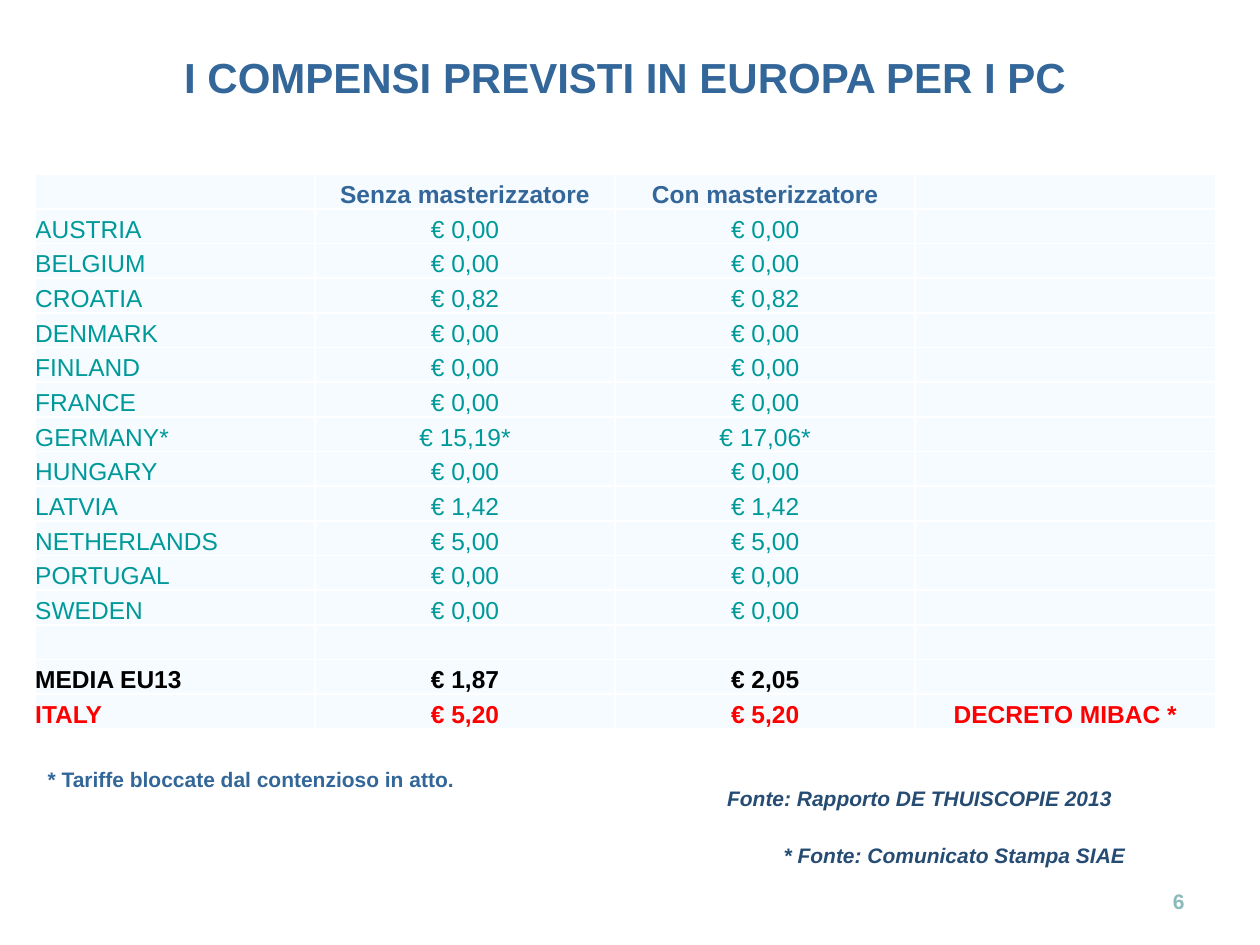
from dataclasses import dataclass, field
from typing import NamedTuple

from pptx import Presentation
from pptx import util as u
from pptx.dml import color
from pptx.enum import text
from pptx.oxml import xmlchemy


@dataclass(frozen=True)
class Theme:
    family: str = "Arial"
    blue: str = "336699"
    navy: str = "264C73"
    teal: str = "009999"
    black: str = "010000"
    red: str = "FF0000"
    sage: str = "8CBABA"
    cell: str = "F6FBFF"
    border: str = "FFFFFF"
    title_size: int = 24
    table_size: int = 14
    note_size: int = 12
    border_width: int = 1


THEME = Theme()
LEFT, CENTER, RIGHT = (text.PP_ALIGN.LEFT, text.PP_ALIGN.CENTER, text.PP_ALIGN.RIGHT)


class Style(NamedTuple):
    color: str
    size: int
    bold: bool = True
    italic: bool = False


@dataclass(frozen=True)
class Label:
    words: str
    box: tuple[float, float, float, float]
    style: Style
    align: text.PP_ALIGN
    frame: dict = field(default_factory=dict)


class Row(NamedTuple):
    values: tuple[str, ...]
    style: Style


HEADING = Style(THEME.blue, THEME.table_size)
COUNTRY = Style(THEME.teal, THEME.table_size, bold=False)
AVERAGE = Style(THEME.black, THEME.table_size)
ITALY = Style(THEME.red, THEME.table_size)
SOURCE = Style(THEME.navy, THEME.note_size, italic=True)

TARIFFS = (
    ("AUSTRIA", "€ 0,00", "€ 0,00"),
    ("BELGIUM", "€ 0,00", "€ 0,00"),
    ("CROATIA", "€ 0,82", "€ 0,82"),
    ("DENMARK", "€ 0,00", "€ 0,00"),
    ("FINLAND", "€ 0,00", "€ 0,00"),
    ("FRANCE", "€ 0,00", "€ 0,00"),
    ("GERMANY*", "€ 15,19*", "€ 17,06*"),
    ("HUNGARY", "€ 0,00", "€ 0,00"),
    ("LATVIA", "€ 1,42", "€ 1,42"),
    ("NETHERLANDS", "€ 5,00", "€ 5,00"),
    ("PORTUGAL", "€ 0,00", "€ 0,00"),
    ("SWEDEN", "€ 0,00", "€ 0,00"),
)
ROWS = (
    Row(("", "Senza masterizzatore", "Con masterizzatore", ""), HEADING),
    *(Row((*tariff, ""), COUNTRY) for tariff in TARIFFS),
    Row(("",) * 4, COUNTRY),
    Row(("MEDIA EU13", "€ 1,87", "€ 2,05", ""), AVERAGE),
    Row(("ITALY", "€ 5,20", "€ 5,20", "DECRETO MIBAC *"), ITALY),
)
COLUMN_WIDTHS = (5.64, 6.05, 6.05, 6.05)
ROW_HEIGHT = 0.7

WRAPPED = {"word_wrap": True}
UNWRAPPED = {"word_wrap": False}
LABELS = (
    Label("I COMPENSI PREVISTI IN EUROPA PER I PC", (0.3, 0.91, 24.61, 1.28),
          Style(THEME.blue, THEME.title_size), CENTER, WRAPPED),
    Label("* Tariffe bloccate dal contenzioso in atto.", (0.71, 15.32, 12, 0.77),
          Style(THEME.blue, THEME.note_size), LEFT, WRAPPED),
    Label("Fonte: Rapporto DE THUISCOPIE 2013", (14.3, 15.72, 8.48, 0.77),
          SOURCE, CENTER, UNWRAPPED),
    Label("* Fonte: Comunicato Stampa SIAE", (15.47, 16.87, 7.47, 0.77),
          SOURCE, RIGHT, UNWRAPPED),
    Label("6", (18.21, 17.65, 5.92, 1.02), Style(THEME.sage, THEME.note_size), RIGHT,
          {**WRAPPED, "vertical_anchor": text.MSO_ANCHOR.MIDDLE}),
)


def apply(target: object, formats: dict) -> None:
    for name, value in formats.items():
        setattr(target, name, value)


def write(paragraph, words: str, style: Style, align: text.PP_ALIGN) -> None:
    paragraph.alignment = align
    if not words:
        ending = xmlchemy.OxmlElement("a:endParaRPr")
        ending.set("sz", str(style.size * 100))
        paragraph._p.append(ending)
        return
    run = paragraph.add_run()
    run.text = words
    apply(run.font, {"name": THEME.family, "size": u.Pt(style.size),
                     "bold": style.bold, "italic": style.italic})
    run.font.color.rgb = color.RGBColor.from_string(style.color)


def draw_label(slide, label: Label) -> None:
    frame = slide.shapes.add_textbox(*map(u.Cm, label.box)).text_frame
    apply(frame, label.frame)
    write(frame.paragraphs[0], label.words, label.style, label.align)


def add_borders(cell) -> None:
    properties = cell._tc.get_or_add_tcPr()
    for position, side in enumerate(("lnL", "lnR", "lnT", "lnB")):
        line = xmlchemy.OxmlElement(f"a:{side}")
        line.set("w", str(u.Pt(THEME.border_width)))
        fill = xmlchemy.OxmlElement("a:solidFill")
        shade = xmlchemy.OxmlElement("a:srgbClr")
        shade.set("val", THEME.border)
        fill.append(shade)
        line.append(fill)
        properties.insert(position, line)


def fill_cell(cell, words: str, style: Style, align: text.PP_ALIGN) -> None:
    margins = ("margin_left", "margin_right", "margin_top", "margin_bottom")
    apply(cell, {**dict.fromkeys(margins, 0), "vertical_anchor": text.MSO_ANCHOR.BOTTOM})
    cell.fill.solid()
    cell.fill.fore_color.rgb = color.RGBColor.from_string(THEME.cell)
    add_borders(cell)
    write(cell.text_frame.paragraphs[0], words, style, align)


def draw_tariffs(slide, rows: tuple[Row, ...]) -> None:
    tariffs = slide.shapes.add_table(
        len(rows), len(COLUMN_WIDTHS), u.Cm(0.71), u.Cm(3.51),
        u.Cm(sum(COLUMN_WIDTHS)), u.Cm(ROW_HEIGHT * len(rows))).table
    apply(tariffs, {"first_row": False, "horz_banding": False})
    for column, width in zip(tariffs.columns, COLUMN_WIDTHS):
        column.width = u.Cm(width)
    for line, row in zip(tariffs.rows, rows):
        line.height = u.Cm(ROW_HEIGHT)
        for index, (cell, words) in enumerate(zip(line.cells, row.values)):
            fill_cell(cell, words, row.style, CENTER if index else LEFT)


def main() -> None:
    deck = Presentation()
    apply(deck, {"slide_width": u.Cm(25.4), "slide_height": u.Cm(19.05)})
    slide = deck.slides.add_slide(deck.slide_layouts[6])
    draw_tariffs(slide, ROWS)
    for label in LABELS:
        draw_label(slide, label)
    deck.save("out.pptx")


if __name__ == "__main__":
    main()
